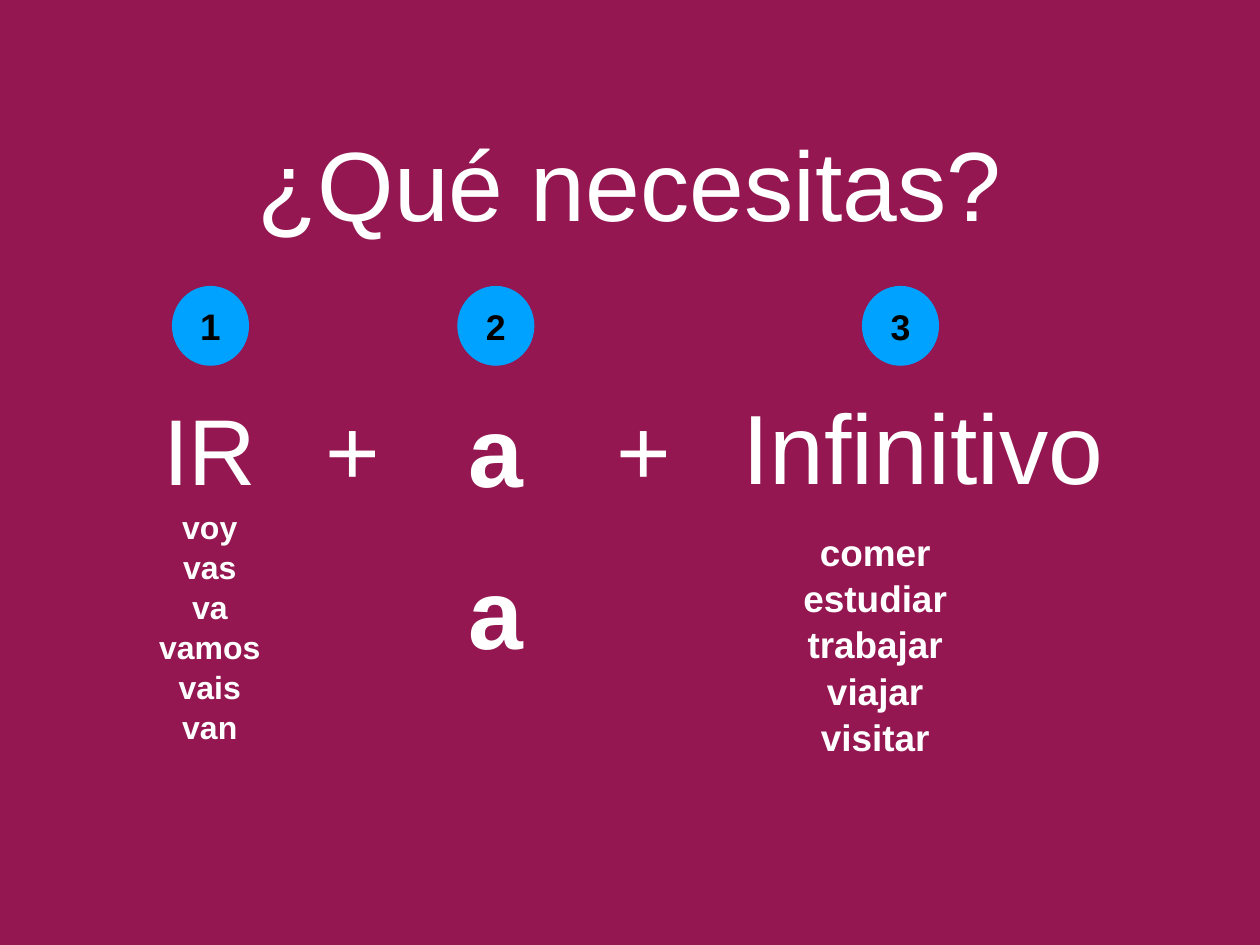
import pptx
import pptx.dml.color
import pptx.enum.shapes
import pptx.enum.text
import pptx.util
from pptx.util import Cm

WHITE, BLACK, BLUE, PLUM = "FFFFFF", "000000", "00A2FF", "941751"
ANCHOR = pptx.enum.text.MSO_ANCHOR


def paint(fill, color):
    fill.solid()
    fill.fore_color.rgb = pptx.dml.color.RGBColor.from_string(color)


def write(shape, lines, size, anchor, bold=False, color=WHITE):
    frame_format = {
        "word_wrap": False,
        "auto_size": pptx.enum.text.MSO_AUTO_SIZE.NONE,
        "vertical_anchor": anchor,
        "margin_left": Cm(0.15),
        "margin_right": Cm(0.15),
        "margin_top": Cm(0.15),
        "margin_bottom": Cm(0.15),
    }
    paragraph_format = {
        "alignment": pptx.enum.text.PP_ALIGN.CENTER,
        "space_before": pptx.util.Pt(0),
        "line_spacing": 1.04 if len(lines) > 1 else 1.0,
    }
    font_format = {"name": "Arial", "size": pptx.util.Pt(size), "bold": bold}
    frame = shape.text_frame
    frame.text = "\n".join(lines)
    for name, value in frame_format.items():
        setattr(frame, name, value)
    for paragraph in frame.paragraphs:
        for name, value in paragraph_format.items():
            setattr(paragraph, name, value)
        for name, value in font_format.items():
            setattr(paragraph.runs[0].font, name, value)
        paint(paragraph.runs[0].font.fill, color)


presentation = pptx.Presentation()
presentation.slide_width = Cm(36.12)
presentation.slide_height = Cm(27.1)
slide = presentation.slides.add_slide(presentation.slide_layouts.get_by_name("Two Content"))
paint(slide.background.fill, PLUM)
title, conjugations, infinitives = list(slide.placeholders)[:3]

placeholders = [
    (title, (3.53, -2.11, 29.06, 9.17), ["¿Qué necesitas?"], 80, ANCHOR.BOTTOM, False),
    (conjugations, (4.29, 14.43, 3.45, 7.04),
     ["voy", "vas", "va", "vamos", "vais", "van"], 26, ANCHOR.MIDDLE, True),
    (infinitives, (22.73, 15.06, 4.72, 6.78),
     ["comer", "estudiar", "trabajar", "viajar", "visitar"], 30, ANCHOR.MIDDLE, True),
]
for shape, box, lines, size, anchor, bold in placeholders:
    for name, value in zip(("left", "top", "width", "height"), box):
        setattr(shape, name, Cm(value))
    write(shape, lines, size, anchor, bold)

for shape in (conjugations, infinitives):
    for paragraph in shape.text_frame.paragraphs:
        properties = paragraph._p.get_or_add_pPr()
        properties.set("marL", "0")
        properties.set("indent", "0")
        properties.append(pptx.oxml.parse_xml(
            '<a:buNone xmlns:a="http://schemas.openxmlformats.org/drawingml/2006/main"/>'))

formula = [
    ("IR", 1.75, 11.13, 8.53, 3.48, 76, ANCHOR.BOTTOM, False),
    ("+", 8.41, 11.13, 3.38, 3.48, 76, ANCHOR.BOTTOM, False),
    ("+", 16.36, 11.13, 4.17, 3.48, 76, ANCHOR.BOTTOM, False),
    ("Infinitivo", 20.45, 10.69, 12.04, 3.91, 80, ANCHOR.BOTTOM, False),
    ("a", 13.26, 11.05, 1.93, 3.63, 80, ANCHOR.MIDDLE, True),
    ("a", 13.26, 15.67, 1.93, 3.63, 80, ANCHOR.MIDDLE, True),
]
for text, left, top, width, height, size, anchor, bold in formula:
    shape = slide.shapes.add_textbox(Cm(left), Cm(top), Cm(width), Cm(height))
    write(shape, [text], size, anchor, bold)

for number, left, size in (("1", 4.93, 30), ("2", 13.11, 29), ("3", 24.71, 29)):
    shape = slide.shapes.add_shape(
        pptx.enum.shapes.MSO_SHAPE.OVAL, Cm(left), Cm(8.2), Cm(2.21), Cm(2.29))
    shape.shadow.inherit = False
    paint(shape.fill, BLUE)
    shape.line.fill.background()
    write(shape, [number], size, ANCHOR.MIDDLE, True, BLACK)

presentation.save("out.pptx")
